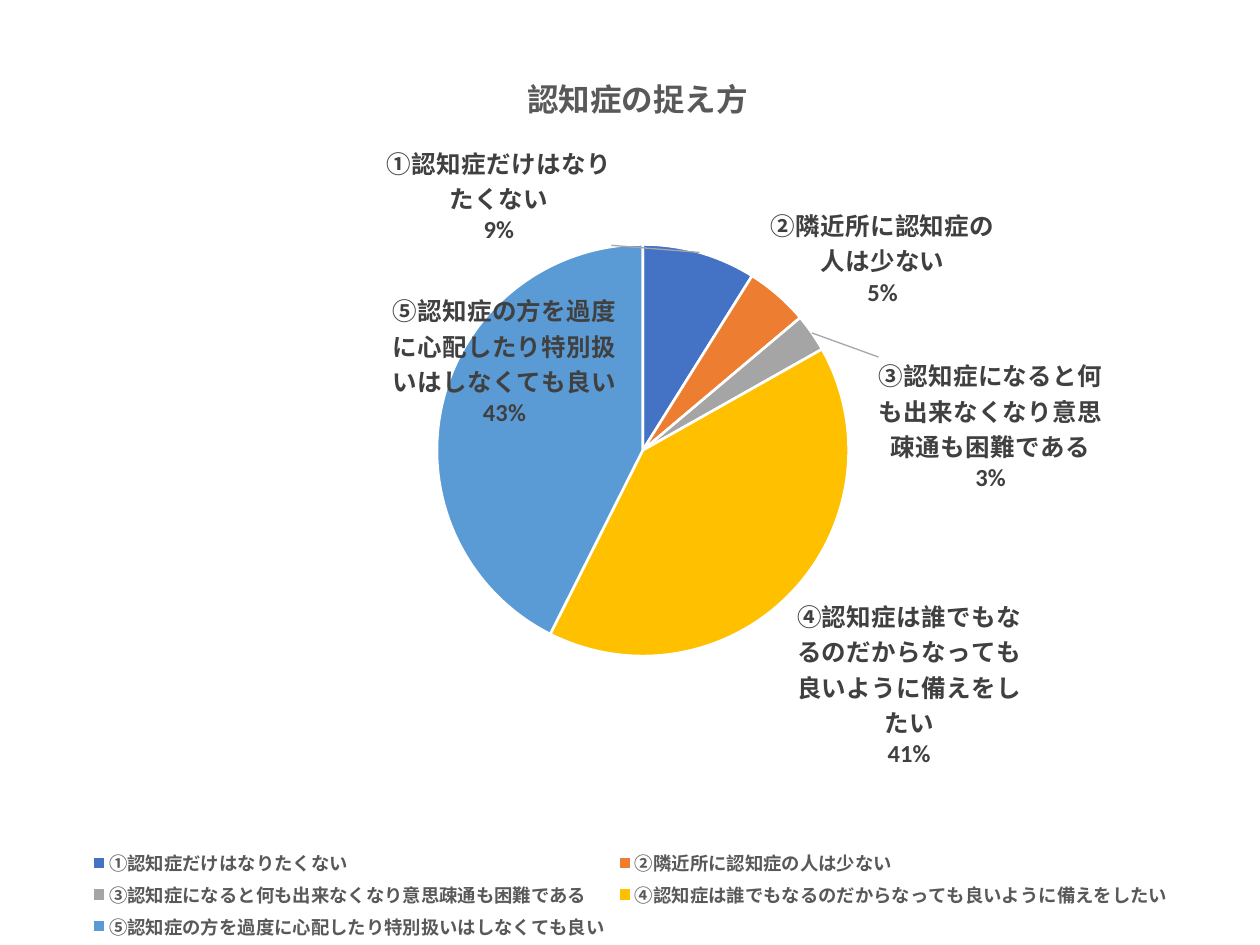
from copy import deepcopy
from dataclasses import dataclass

from pptx import Presentation
from pptx.chart.data import CategoryChartData
from pptx.dml.color import RGBColor
from pptx.enum.chart import XL_CHART_TYPE, XL_LABEL_POSITION, XL_LEGEND_POSITION
from pptx.oxml import parse_xml
from pptx.oxml.ns import nsdecls, qn
from pptx.util import Pt

PIE = XL_CHART_TYPE.PIE
OUTSIDE = XL_LABEL_POSITION.OUTSIDE_END
BOTTOM = XL_LEGEND_POSITION.BOTTOM


@dataclass(frozen=True)
class Theme:
    font: str = "Calibri"
    title_size: float = 18
    label_size: float = 14
    legend_size: float = 10.5
    muted: str = "595959"
    label: str = "404040"
    leader: str = "A6A6A6"
    white: str = "FFFFFF"
    slices: tuple = ("4472C4", "ED7D31", "A5A5A5", "FFC000", "5B9BD5")


THEME = Theme()

TITLE = "認知症の捉え方"
ANSWERS = {
    "①認知症だけはなりたくない": 9,
    "②隣近所に認知症の人は少ない": 5,
    "③認知症になると何も出来なくなり意思疎通も困難である": 3,
    "④認知症は誰でもなるのだからなっても良いように備えをしたい": 41,
    "⑤認知症の方を過度に心配したり特別扱いはしなくても良い": 43,
}
# Label shifts from the default place, as fractions of the chart
LABEL_SHIFTS = {0: (-0.26, 0), 1: (-0.01, 0.02), 2: (0.05, 0.18), 4: (0.15, 0.03)}


def style_font(font, size, color):
    font.name = THEME.font
    font.size = Pt(size)
    font.bold = True
    font.color.rgb = RGBColor.from_string(color)


def layout_xml(x, y, size=None, inner=False, edge=True):
    target = '<c:layoutTarget val="inner"/>' if inner else ""
    modes = '<c:xMode val="edge"/><c:yMode val="edge"/>' if edge else ""
    extent = f'<c:w val="{size[0]}"/><c:h val="{size[1]}"/>' if size else ""
    return (f'<c:layout {nsdecls("c")}><c:manualLayout>{target}{modes}'
            f'<c:x val="{x}"/><c:y val="{y}"/>{extent}</c:manualLayout></c:layout>')


def set_layout(parent, before, layout):
    """Replace the layout of a chart part, ahead of the named sibling."""
    for old in parent.findall(qn("c:layout")):
        parent.remove(old)
    parent.find(qn(before)).addprevious(parse_xml(layout))


def add_title(chart):
    chart.has_title = True
    frame = chart.chart_title.text_frame
    frame.text = TITLE
    style_font(frame.paragraphs[0].font, THEME.title_size, THEME.muted)
    chart.chart_title.include_in_layout = False
    set_layout(chart.chart_title._element, "c:overlay", layout_xml(0.41, 0.04))


def add_legend(chart):
    chart.has_legend = True
    legend = chart.legend
    legend.position = BOTTOM
    legend.include_in_layout = False
    style_font(legend.font, THEME.legend_size, THEME.muted)
    set_layout(legend._element, "c:overlay", layout_xml(0.05, 0.89, (0.9, 0.11)))


def color_slices(series):
    for index, color in enumerate(THEME.slices):
        style = series.points[index].format
        style.fill.solid()
        style.fill.fore_color.rgb = RGBColor.from_string(color)
        style.line.color.rgb = RGBColor.from_string(THEME.white)
        style.line.width = Pt(1.5)


def add_labels(series):
    labels = series.data_labels
    labels.show_value = False
    labels.show_category_name = True
    labels.show_percentage = True
    labels.position = OUTSIDE
    style_font(labels.font, THEME.label_size, THEME.label)

    # Category and percentage on separate lines, with leader lines
    root = labels._element
    for tag in ("c:separator", "c:showLeaderLines", "c:leaderLines"):
        for old in root.findall(qn(tag)):
            root.remove(old)
    space = nsdecls("c", "a")
    for part in (
        f"<c:separator {space}>\n</c:separator>",
        f'<c:showLeaderLines {space} val="1"/>',
        f'<c:leaderLines {space}><c:spPr><a:ln w="9525"><a:solidFill>'
        f'<a:srgbClr val="{THEME.leader}"/></a:solidFill></a:ln></c:spPr></c:leaderLines>',
    ):
        root.append(parse_xml(part))

    # Moved labels share the settings of the series
    shared = [child for child in root
              if child.tag not in (qn("c:showLeaderLines"), qn("c:leaderLines"))]
    for position, (index, (x, y)) in enumerate(LABEL_SHIFTS.items()):
        label = parse_xml(f'<c:dLbl {space}><c:idx val="{index}"/></c:dLbl>')
        label.append(parse_xml(layout_xml(x, y, edge=False)))
        for child in shared:
            label.append(deepcopy(child))
        root.insert(position, label)


def add_pie(page, left, top, width, height):
    data = CategoryChartData()
    data.categories = list(ANSWERS)
    data.add_series("Series 1", list(ANSWERS.values()))
    chart = page.shapes.add_chart(PIE, left, top, width, height, data).chart
    chart.font.name = THEME.font
    chart.font.size = Pt(10)
    plot = chart.plots[0]
    plot.vary_by_categories = True
    color_slices(plot.series[0])
    add_labels(plot.series[0])
    add_title(chart)
    add_legend(chart)
    plot_area = chart._chartSpace.chart.plotArea
    set_layout(plot_area, "c:pieChart", layout_xml(0.34, 0.23, (0.34, 0.46), inner=True))


def main():
    deck = Presentation()
    deck.slide_width, deck.slide_height = Pt(720), Pt(540)
    page = deck.slides.add_slide(deck.slide_layouts[6])
    add_pie(page, Pt(14.4), Pt(16.6), Pt(692), Pt(523.4))
    deck.save("out.pptx")


if __name__ == "__main__":
    main()
